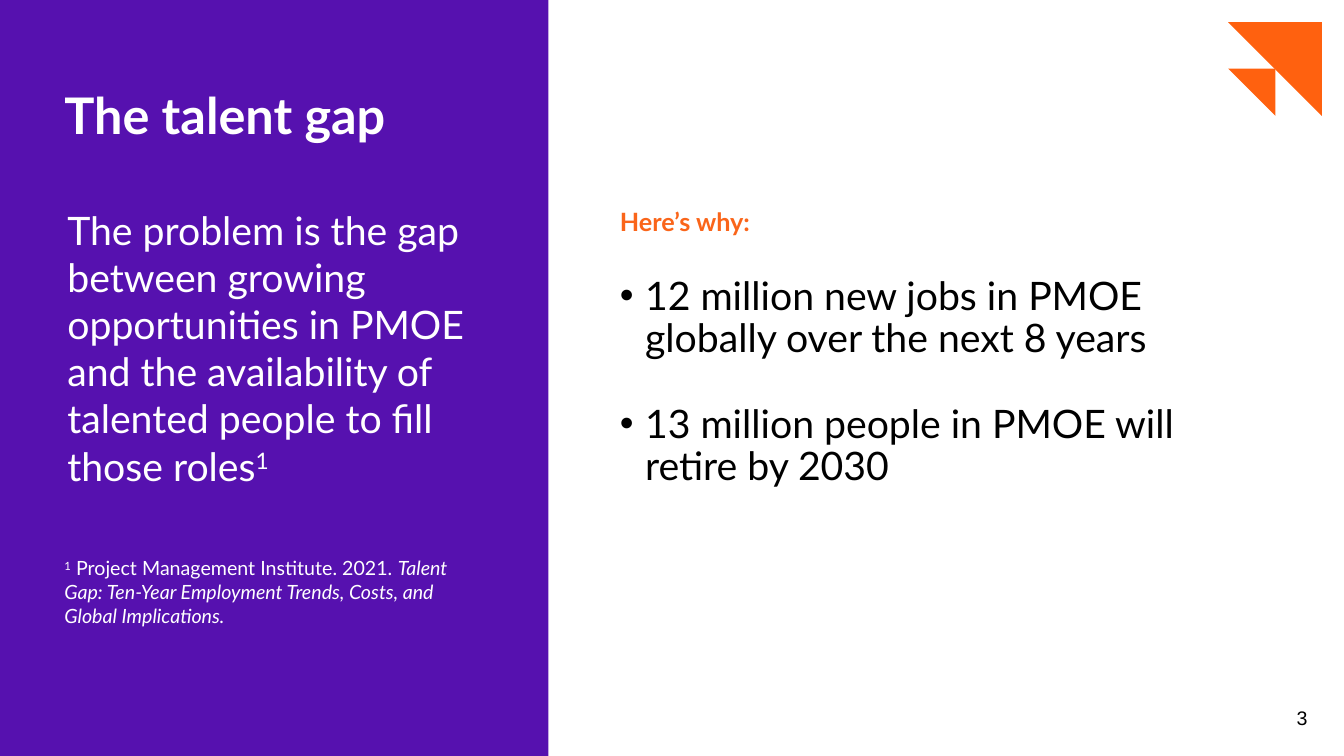
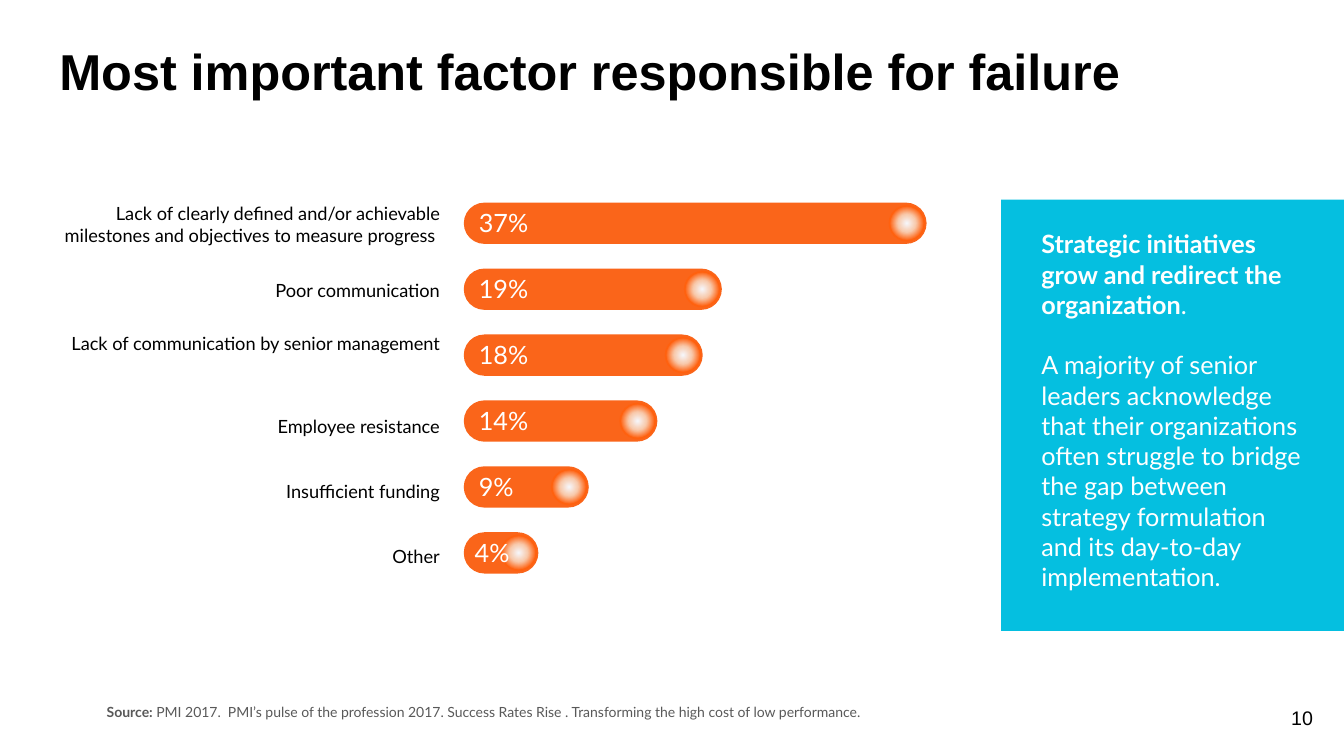
"""Build two slides on the talent gap and on why projects fail."""
from dataclasses import dataclass
from typing import NamedTuple

from pptx import Presentation, oxml, presentation as pr, slide as sl, util as u
from pptx.dml import color as dc
from pptx.enum import shapes as es, text as et
from pptx.oxml import ns, xmlchemy as xc
from pptx.shapes import autoshape as au
from pptx.text import text as tx


@dataclass(frozen=True)
class Theme:
    """Colours, fonts and type sizes of the deck."""
    violet: str = "5611AF"
    orange: str = "FA651A"
    flame: str = "FF610F"
    peach: str = "F8CBAD"
    pearl: str = "F6F8FC"
    cyan: str = "05BFE0"
    black: str = "000000"
    white: str = "FFFFFF"
    grey: str = "595959"
    body: str = "Lato"
    plain: str = "Arial"
    title: float = 36
    lead: float = 28
    mid: float = 18
    small: float = 14
    label: float = 13
    source: float = 10


T = Theme()
SHAPE = es.MSO_SHAPE
LEFT, CENTER, RIGHT = et.PP_ALIGN.LEFT, et.PP_ALIGN.CENTER, et.PP_ALIGN.RIGHT


class Box(NamedTuple):
    """Place and size in inches."""
    left: float
    top: float
    width: float
    height: float


class Style(NamedTuple):
    """Look of a text box."""
    size: float
    color: str
    font: str = T.body
    bold: bool = False
    align: et.PP_ALIGN = LEFT
    line: float = 1.0
    gap: float = 0
    bullet: bool = False
    middle: bool = False


class Piece(NamedTuple):
    """Stretch of text with its own emphasis."""
    text: str
    bold: bool = False
    italic: bool = False
    raised: bool = False


class Bar(NamedTuple):
    """One cause of failure, with its share, drawn width and label top."""
    cause: str
    share: str
    width: float
    top: float


BARS = [
    Bar("Lack of clearly defined and/or achievable milestones and objectives "
        "to measure progress ", "37%", 4.59, 1.96),
    Bar("Poor communication", "19%", 2.56, 2.72),
    Bar("Lack of communication by senior management", "18%", 2.37, 3.25),
    Bar("Employee resistance", "14%", 1.92, 4.07),
    Bar("Insufficient funding", "9%", 1.24, 4.72),
    Bar("Other", "4%", 0.74, 5.36),
]


def place(box: Box) -> list[u.Length]:
    """Turn a box into lengths."""
    return [u.Inches(side) for side in box]


def add_dot(para: tx._Paragraph) -> None:
    """Give a paragraph a hanging bullet."""
    props = para._p.get_or_add_pPr()
    indent = u.Inches(0.25)
    props.set("marL", str(indent))
    props.set("indent", str(-indent))
    for tag, key, value in (("a:buFont", "typeface", T.plain), ("a:buChar", "char", "•")):
        dot = xc.OxmlElement(tag)
        dot.set(key, value)
        props.append(dot)


def write(slide: sl.Slide, box: Box, style: Style, *paras: str | list[Piece]) -> None:
    """Add a text box, one paragraph per item."""
    frame = slide.shapes.add_textbox(*place(box)).text_frame
    frame.word_wrap = True
    if style.middle:
        frame.vertical_anchor = et.MSO_ANCHOR.MIDDLE
    for num, item in enumerate(paras):
        para = frame.add_paragraph() if num else frame.paragraphs[0]
        para.alignment = style.align
        para.line_spacing = style.line
        if num:
            para.space_before = u.Pt(style.gap)
        if style.bullet:
            add_dot(para)
        pieces = [Piece(item, style.bold)] if isinstance(item, str) else item
        for piece in pieces:
            run = para.add_run()
            run.text = piece.text
            font = run.font
            font.name, font.size = style.font, u.Pt(style.size)
            font.bold, font.italic = piece.bold, piece.italic
            font.color.rgb = dc.RGBColor.from_string(style.color)
            if piece.raised:
                run._r.get_or_add_rPr().set("baseline", "30000")


def draw(slide: sl.Slide, kind: es.MSO_SHAPE, box: Box, color: str) -> au.Shape:
    """Add a flat shape with no outline."""
    shape = slide.shapes.add_shape(kind, *place(box))
    shape.shadow.inherit = False
    shape.fill.solid()
    shape.fill.fore_color.rgb = dc.RGBColor.from_string(color)
    shape.line.fill.background()
    return shape


def add_knob(slide: sl.Slide, box: Box) -> None:
    """Add a glowing round knob."""
    knob = draw(slide, SHAPE.OVAL, box, T.flame)
    knob.line.color.rgb = dc.RGBColor.from_string(T.flame)
    knob.line.width = u.Pt(1)
    stops = ((0, T.pearl), (36, T.peach), (69, T.flame), (100, T.flame))
    marks = "".join(f'<a:gs pos="{pos * 1000}"><a:srgbClr val="{hue}"/></a:gs>'
                    for pos, hue in stops)
    glow = oxml.parse_xml(
        f'<a:gradFill {ns.nsdecls("a")}><a:gsLst>{marks}</a:gsLst><a:path path="circle">'
        '<a:fillToRect l="50000" t="50000" r="50000" b="50000"/></a:path></a:gradFill>')
    props = knob._element.spPr
    props.replace(props.find(ns.qn("a:solidFill")), glow)


def add_page(deck: pr.Presentation, number: int) -> sl.Slide:
    """Add a blank slide with its page number."""
    slide = deck.slides.add_slide(deck.slide_layouts[6])
    write(slide, Box(12.63, 6.95, 0.57, 0.33),
          Style(T.small, T.black, T.plain, align=CENTER), str(number))
    return slide


def add_title(slide: sl.Slide, box: Box, text: str, color: str, font: str) -> None:
    """Add a bold slide title."""
    write(slide, box, Style(T.title, color, font, bold=True, line=0.9, middle=True), text)


def add_gap(deck: pr.Presentation) -> None:
    """Build the talent gap slide."""
    slide = add_page(deck, 3)
    draw(slide, SHAPE.RECTANGLE, Box(-0.04, 0, 5.48, 7.5), T.violet)
    write(slide, Box(0.57, 2, 4.57, 2.93), Style(T.lead, T.white),
          [Piece("The problem is the gap between growing opportunities in PMOE and "
                 "the availability of talented people to fill those roles"),
           Piece("1", raised=True)])
    add_title(slide, Box(0.54, 0.45, 4.6, 1.45), "The talent gap", T.white, T.body)
    write(slide, Box(0.54, 5.47, 4.02, 0.81), Style(T.small, T.white),
          [Piece("1", raised=True),
           Piece(" Project Management Institute. 2021. "),
           Piece("Talent Gap: Ten-Year Employment Trends, Costs, and Global "
                 "Implications.", italic=True)])
    write(slide, Box(6.05, 2, 3.69, 0.4), Style(T.mid, T.orange, bold=True), "Here’s why:")
    write(slide, Box(6.05, 2.69, 6.21, 2.25),
          Style(T.lead, T.black, line=0.9, gap=31, bullet=True),
          "12 million new jobs in PMOE globally over the next 8 years",
          "13 million people in PMOE will retire by 2030")
    for top, side in ((0.68, 0.47), (0.22, 0.93)):
        corner = draw(slide, SHAPE.RIGHT_TRIANGLE, Box(12.18, top, side, side), T.flame)
        corner.rotation = 180


def add_causes(deck: pr.Presentation) -> None:
    """Build the causes of failure slide."""
    slide = add_page(deck, 10)
    add_title(slide, Box(0.49, 0.49, 12.5, 0.49),
              "Most important factor responsible for failure", T.black, T.plain)
    left, first, last, height = 4.6, 2.01, 5.28, 0.41
    pitch = (last - first) / (len(BARS) - 1)
    knob = 0.35
    for row, bar in enumerate(BARS):
        top = first + row * pitch
        write(slide, Box(0.46, bar.top, 4, 0.32),
              Style(T.label, T.black, align=RIGHT), bar.cause)
        pill = draw(slide, SHAPE.ROUNDED_RECTANGLE,
                    Box(left, top, bar.width, height), T.orange)
        pill.adjustments[0] = 0.5
        add_knob(slide, Box(left + bar.width - knob - 0.02,
                            top + (height - knob) / 2, knob, knob))
        inset = 0.05 if bar.width > 1 else 0.01
        write(slide, Box(left + inset, top, 0.75, 0.4),
              Style(T.mid, T.white), bar.share)
    draw(slide, SHAPE.RECTANGLE, Box(9.93, 1.98, 3.4, 4.28), T.cyan)
    write(slide, Box(10.23, 2.22, 2.81, 4.04), Style(T.mid, T.white, gap=21.6),
          [Piece("Strategic initiatives grow and redirect the organization", bold=True),
           Piece(".")],
          "A majority of senior leaders acknowledge that their organizations often "
          "struggle to bridge the gap between strategy formulation and its day-to-day "
          "implementation.")
    write(slide, Box(0.96, 6.93, 9.86, 0.27), Style(T.source, T.grey),
          [Piece("Source:", bold=True),
           Piece(" PMI 2017.  PMI’s pulse of the profession 2017. Success Rates Rise . "
                 "Transforming the high cost of low performance.")])


def main() -> None:
    """Build and save the deck."""
    deck = Presentation()
    deck.slide_width, deck.slide_height = u.Inches(13.33), u.Inches(7.5)
    add_gap(deck)
    add_causes(deck)
    deck.save("out.pptx")


if __name__ == "__main__":
    main()
